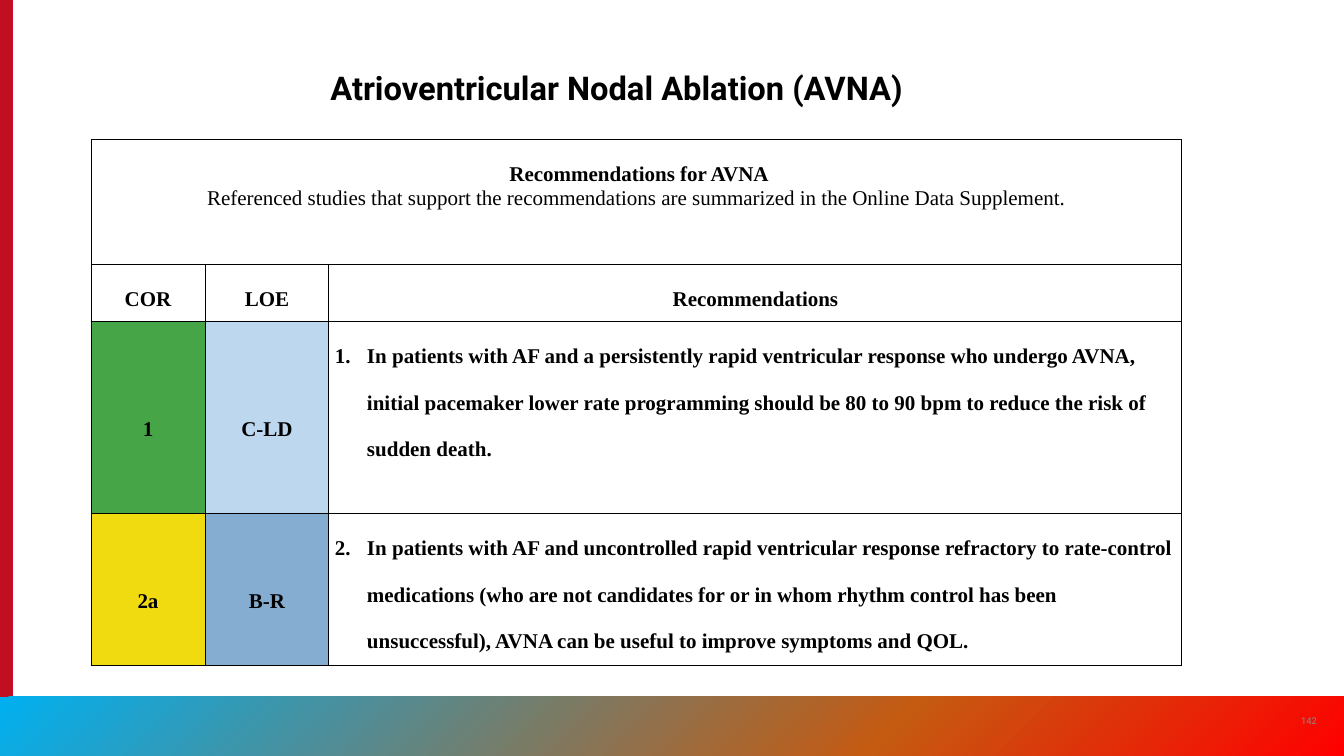
from copy import deepcopy

from pptx import Presentation
from pptx.dml.color import RGBColor
from pptx.enum.shapes import MSO_SHAPE as Shape
from pptx.enum.text import MSO_ANCHOR as Anchor, PP_ALIGN as Align
from pptx.oxml.ns import qn
from pptx.oxml.xmlchemy import OxmlElement as Element
from pptx.util import Pt

PX = 914400 / 84
COLORS = {
    "bar": "C10E21", "black": "000000", "page": "8A8B8A",
    "blue": "00B0F0", "orange": "C55A11", "red": "FF0000",
    "cor_1": "45A547", "cor_2a": "F0DA10",
    "loe_c": "BDD7EE", "loe_b": "85ADD1",
}


def px(*lengths):
    return [round(length * PX) for length in lengths]


def write(paragraph, text, size, font, color="black", bold=True):
    run = paragraph.add_run()
    run.text = text
    run.font.size = Pt(size)
    run.font.name = font
    run.font.bold = bold
    run.font.color.rgb = RGBColor.from_string(COLORS[color])


deck = Presentation()
deck.slide_width, deck.slide_height = px(1344, 756)
slide = deck.slides.add_slide(deck.slide_layouts[5])

# Red side bar
side_bar = slide.shapes.add_shape(Shape.RECTANGLE, *px(0, 0, 13, 756))
side_bar.fill.solid()
side_bar.fill.fore_color.rgb = RGBColor.from_string(COLORS["bar"])

# Gradient footer with three stops
footer = slide.shapes.add_shape(Shape.RECTANGLE, *px(0, 697, 1344, 59))
footer.fill.gradient()
footer.fill.gradient_angle = 315
stop_list = footer._element.spPr.find(qn("a:gradFill")).find(qn("a:gsLst"))
stop_list.append(deepcopy(stop_list[-1]))
for stop, color, position in zip(footer.fill.gradient_stops,
                                 ("blue", "orange", "red"), (0, 0.66, 1)):
    stop.color.rgb = RGBColor.from_string(COLORS[color])
    stop.position = position

for band in (side_bar, footer):
    band.line.fill.background()
    band.shadow.inherit = False

# Page number
page_number = slide.shapes.add_textbox(*px(1289, 701, 40, 40)).text_frame
page_number.word_wrap = True
page_number.vertical_anchor = Anchor.MIDDLE
page_number.paragraphs[0].alignment = Align.CENTER
write(page_number.paragraphs[0], "142", 8, "Roboto", "page", False)

# Title
title = slide.shapes.title
title.left, title.top, title.width, title.height = px(322, 42, 631, 70)
heading = title.text_frame
heading.vertical_anchor = Anchor.BOTTOM
heading.paragraphs[0].alignment = Align.LEFT
heading.paragraphs[0].line_spacing = 0.9
write(heading.paragraphs[0], "Atrioventricular Nodal Ablation (AVNA)", 28, "Roboto")

# Recommendation rows: text and fill of each cell
ROWS = [
    [(" Recommendations for AVNA", None), ("", None), ("", None)],
    [("COR", None), ("LOE", None), ("Recommendations", None)],
    [("1", "cor_1"), ("C-LD", "loe_c"),
     ("In patients with AF and a persistently rapid ventricular response who "
      "undergo AVNA, initial pacemaker lower rate programming should be 80 to "
      "90 bpm to reduce the risk of sudden death.", None)],
    [("2a", "cor_2a"), ("B-R", "loe_b"),
     ("In patients with AF and uncontrolled rapid ventricular response refractory "
      "to rate-control medications (who are not candidates for or in whom rhythm "
      "control has been unsuccessful), AVNA can be useful to improve symptoms "
      "and QOL.", None)],
]
SERIF = "Times New Roman"
table = slide.shapes.add_table(4, 3, *px(91, 140, 1091, 526)).table
table.first_row = table.horz_banding = False
for column, width in zip(table.columns, px(114, 124, 853)):
    column.width = width
for row, height in zip(table.rows, px(125, 57, 192, 152)):
    row.height = height
table.cell(0, 0).merge(table.cell(0, 2))

for r, row in enumerate(ROWS):
    for c, (text, fill) in enumerate(row):
        cell = table.cell(r, c)
        cell.margin_left, cell.margin_right = px(6, 6)
        cell.margin_top = cell.margin_bottom = 0
        cell.vertical_anchor = Anchor.MIDDLE if fill else Anchor.TOP

        # Black border on every side
        for side in ("a:lnL", "a:lnR", "a:lnT", "a:lnB"):
            border = Element(side)
            border.set("w", str(Pt(1)))
            solid, rgb = Element("a:solidFill"), Element("a:srgbClr")
            rgb.set("val", COLORS["black"])
            solid.append(rgb)
            border.append(solid)
            cell._tc.get_or_add_tcPr().append(border)
        if fill:
            cell.fill.solid()
            cell.fill.fore_color.rgb = RGBColor.from_string(COLORS[fill])
        else:
            cell.fill.background()

        if not text:
            continue
        paragraph = cell.text_frame.paragraphs[0]
        if r >= 2 and c == 2:
            # Numbered recommendation with a hanging indent
            properties = paragraph._p.get_or_add_pPr()
            indent, = px(32)
            properties.set("marL", str(indent))
            properties.set("indent", str(-indent))
            number = Element("a:buAutoNum")
            number.set("type", "arabicPeriod")
            number.set("startAt", str(r - 1))
            properties.append(number)
        else:
            paragraph.alignment = Align.CENTER
        paragraph.line_spacing = 2.0
        write(paragraph, text, 18, SERIF)

# Source line under the table heading
source_line = table.cell(0, 0).text_frame.add_paragraph()
source_line.alignment = Align.CENTER
write(source_line, "Referenced studies that support the recommendations are "
      "summarized in the Online Data Supplement.", 18, SERIF, bold=False)

deck.save("out.pptx")
